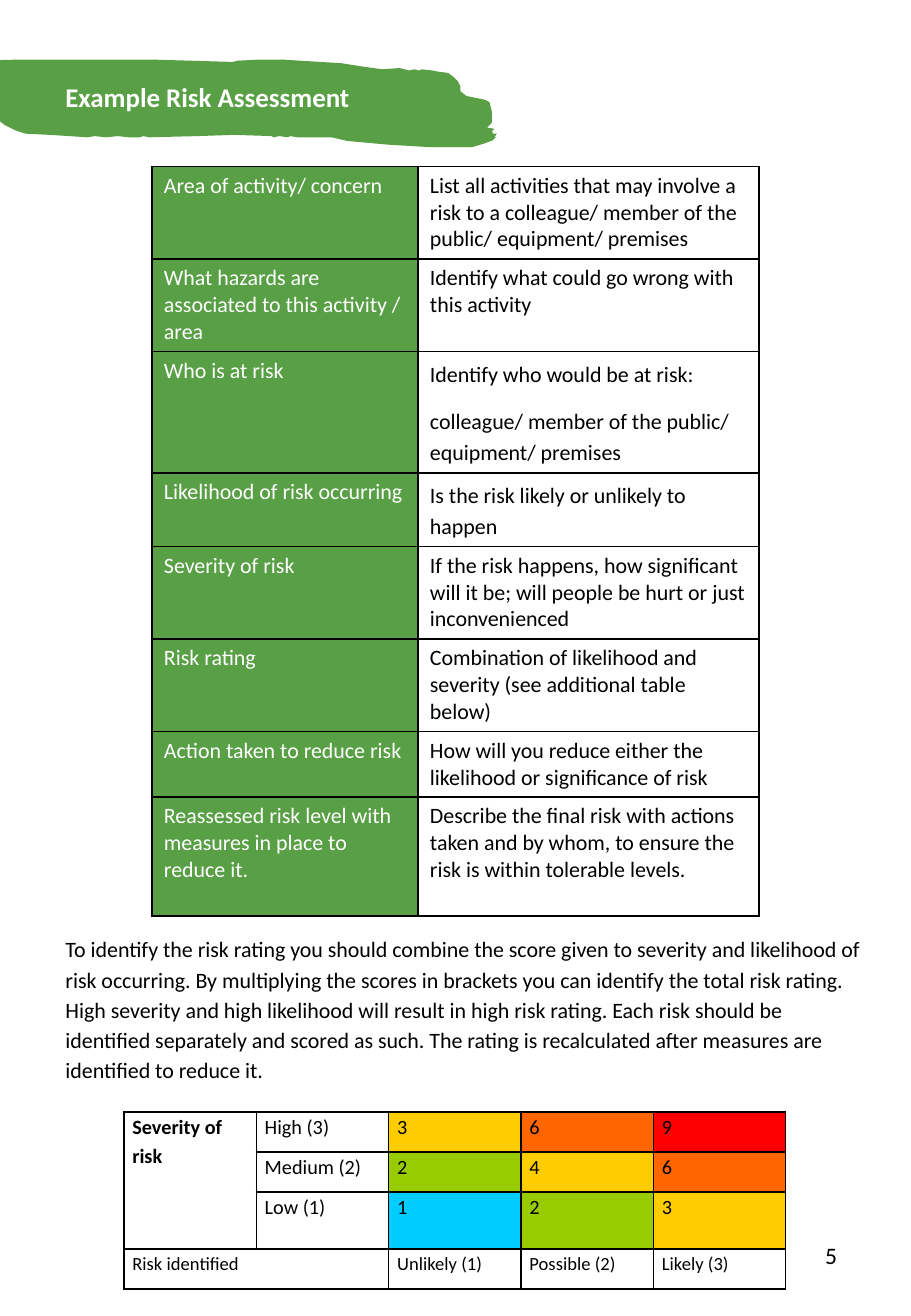
import pptx
import pptx.util
import pptx.dml.color
import pptx.enum.text
import pptx.oxml
import pptx.oxml.ns

Inches, Pt = pptx.util.Inches, pptx.util.Pt
hues = {"green": "599F46", "white": "FFFFFF", "black": "000000", "blue": "00CCFF",
        "lime": "99CC00", "gold": "FFCC00", "orange": "FF6600", "red": "FF0000"}
rgb = {name: pptx.dml.color.RGBColor.from_string(code) for name, code in hues.items()}


def write(frame, words, size=13, hue="black", bold=False, lead=None, after=None, align=None):
    """Fill a text frame, one paragraph per line of words."""
    frame.word_wrap = True
    for i, line in enumerate(words.split("\n")):
        para = frame.add_paragraph() if i else frame.paragraphs[0]
        para.line_spacing, para.alignment = lead, align
        para.space_after = None if after is None else Pt(after)
        run = para.add_run()
        run.text = line
        run.font.name, run.font.size, run.font.bold = "Calibri", Pt(size), bold
        run.font.color.rgb = rgb[hue]


def grid(left, top, cols, rows):
    """Add a plain table with thin black borders."""
    frame = slide.shapes.add_table(len(rows), len(cols), Inches(left), Inches(top),
                                   Inches(sum(cols)), Inches(sum(rows)))
    table = frame.table
    table.first_row = table.horz_banding = False
    for col, wide in zip(table.columns, cols):
        col.width = Inches(wide)
    for row, high in zip(table.rows, rows):
        row.height = Inches(high)
    for cell in table.iter_cells():
        props = cell._tc.get_or_add_tcPr()
        for side in "LRTB":
            props.append(pptx.oxml.parse_xml(
                f'<a:ln{side} {pptx.oxml.ns.nsdecls("a")} w="12700"><a:solidFill>'
                f'<a:srgbClr val="{hues["black"]}"/></a:solidFill></a:ln{side}>'))
        cell.fill.background()
    return table


deck = pptx.Presentation()
deck.slide_width, deck.slide_height = Inches(7.5), Inches(10.83)
slide = deck.slides.add_slide(deck.slide_layouts[6])

# Rating matrix
rates = grid(1.02, 9.15, [1.09] * 5, [0.33, 0.33, 0.47, 0.33])
rates.cell(0, 0).merge(rates.cell(2, 0))
rates.cell(3, 0).merge(rates.cell(3, 1))
marks = [["Severity of risk", "High (3)", "3", "6", "9"],
         ["", "Medium (2)", "2", "4", "6"],
         ["", "Low (1)", "1", "2", "3"],
         ["Risk identified", "", "Unlikely (1)", "Possible (2)", "Likely (3)"]]
heat = {"1": "blue", "2": "lime", "3": "gold", "4": "gold", "6": "orange", "9": "red"}
for r, line in enumerate(marks):
    for c, words in enumerate(line):
        cell = rates.cell(r, c)
        cell.margin_left = cell.margin_right = Inches(0.07)
        cell.margin_top = cell.margin_bottom = 0
        if words:
            write(cell.text_frame, words, size=11 if r == 3 else 12,
                  bold=r == c == 0, lead=1.15, after=10)
        if words in heat:
            cell.fill.solid()
            cell.fill.fore_color.rgb = rgb[heat[words]]

# Assessment table
loose = {"lead": 1.15, "after": 10}
steps = [
    (0.76, "Area of activity/ concern", "List all activities that may involve a risk to a "
     "colleague/ member of the public/ equipment/ premises", {}),
    (0.76, "What hazards are associated to this activity / area",
     "Identify what could go wrong with this activity", {}),
    (1, "Who is at risk", "Identify who would be at risk:\n"
     "colleague/ member of the public/ equipment/ premises", loose),
    (0.6, "Likelihood of risk occurring", "Is the risk likely or unlikely to happen", loose),
    (0.76, "Severity of risk", "If the risk happens, how significant will it be; "
     "will people be hurt or just inconvenienced", {}),
    (0.76, "Risk rating", "Combination of likelihood and severity "
     "(see additional table below)", {}),
    (0.54, "Action taken to reduce risk",
     "How will you reduce either the likelihood or significance of risk", {}),
    (0.98, "Reassessed risk level with measures in place to reduce it.",
     "Describe the final risk with actions taken and by whom, to ensure the risk is "
     "within tolerable levels.", {}),
]
tasks = grid(1.25, 1.37, [2.19, 2.81], [step[0] for step in steps])
for r, (high, label, guide, form) in enumerate(steps):
    head = tasks.cell(r, 0)
    head.fill.solid()
    head.fill.fore_color.rgb = rgb["green"]
    write(head.text_frame, label, hue="white")
    write(tasks.cell(r, 1).text_frame, guide, **form)

# Brush stroke behind the title, in hundredths of an inch
edge = [(405, 115), (409, 113), (407, 113), (409, 110), (406, 110), (405, 108),
        (407, 106), (401, 105), (405, 101), (405, 92), (403, 84), (399, 82),
        (384, 79), (379, 75), (379, 71), (377, 67), (373, 63), (369, 60),
        (361, 59), (356, 58), (347, 57), (345, 58), (341, 57), (337, 58),
        (329, 56), (315, 57), (300, 55), (281, 52), (248, 50), (232, 49),
        (213, 49), (195, 50), (192, 51), (125, 49), (17, 49), (-25, 50),
        (-48, 52), (-67, 55), (-63, 56), (-73, 57), (-67, 57),
        (-71, 60), (-65, 61), (-63, 63), (-66, 64), (-52, 65),
        (-61, 68), (-63, 71), (-63, 78), (-57, 87), (-48, 89),
        (-2, 91), (-4, 93), (-1, 99), (4, 103), (12, 107),
        (21, 110), (41, 111), (57, 112), (72, 113), (78, 112), (87, 113),
        (97, 112), (106, 113), (115, 113), (118, 112), (123, 113), (162, 112),
        (193, 111), (224, 112), (225, 113), (230, 112), (237, 113), (239, 112),
        (245, 113), (273, 113), (286, 116), (319, 119), (353, 121), (389, 121),
        (399, 118), (407, 115)]
trace = slide.shapes.build_freeform(*edge[0], scale=Inches(0.01))
trace.add_line_segments(edge[1:], close=True)
brush = trace.convert_to_shape()
brush.shadow.inherit = False
brush.fill.solid()
brush.fill.fore_color.rgb = rgb["green"]
brush.line.fill.background()

# Title, rating advice and page number
advice = ("To identify the risk rating you should combine the score given to severity and "
          "likelihood of risk occurring. By multiplying the scores in brackets you can identify "
          "the total risk rating. High severity and high likelihood will result in high risk "
          "rating. Each risk should be identified separately and scored as such. The rating is "
          "recalculated after measures are identified to reduce it.")
right = pptx.enum.text.PP_ALIGN.RIGHT
notes = [((0.44, 0.61, 2.83, 0.37), "Example Risk Assessment",
          {"size": 16, "hue": "white", "bold": True}),
         ((0.44, 7.62, 6.75, 1.34), advice, loose),
         ((5.3, 10.04, 1.69, 0.58), "5", {"size": 14, "align": right})]
for place, words, form in notes:
    box = slide.shapes.add_textbox(*map(Inches, place))
    write(box.text_frame, words, **form)
box.text_frame.vertical_anchor = pptx.enum.text.MSO_ANCHOR.MIDDLE

deck.save("out.pptx")
